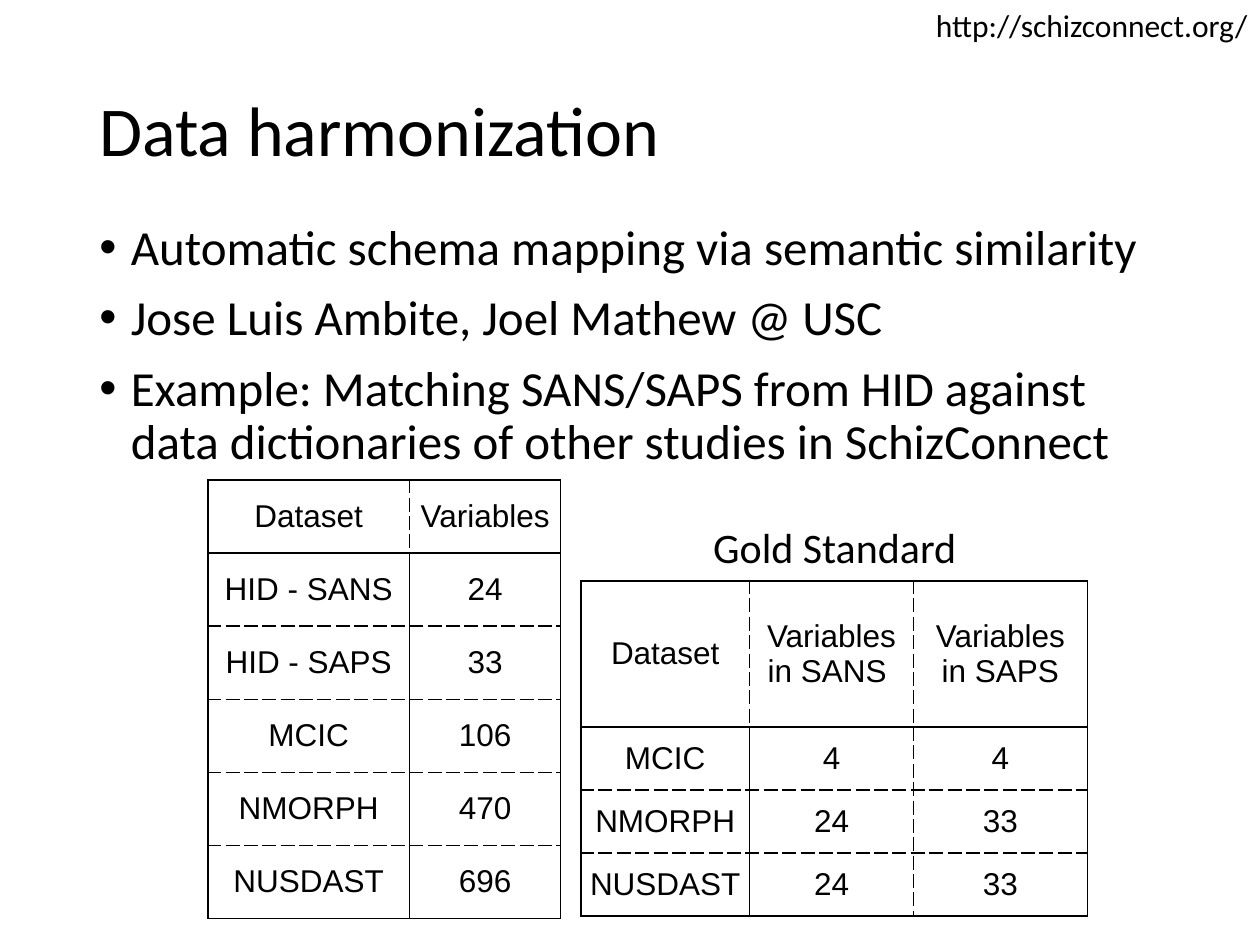
import dataclasses

import pptx
import pptx.dml.color
import pptx.enum.text
import pptx.oxml.ns
import pptx.util
from lxml import etree

Inches = pptx.util.Inches
Pt = pptx.util.Pt
ALIGN = pptx.enum.text.PP_ALIGN
ANCHOR = pptx.enum.text.MSO_ANCHOR
AUTO_SIZE = pptx.enum.text.MSO_AUTO_SIZE
qn = pptx.oxml.ns.qn


@dataclasses.dataclass(frozen=True)
class Theme:
    ink: str = "000000"
    paper: str = "FFFFFF"
    text_font: str = "Calibri"
    table_font: str = "Arial"
    title_size: int = 40
    bullet_size: int = 28
    caption_size: int = 24
    small_size: int = 18
    border_width: int = 1


THEME = Theme()


def write(paragraph, text, size, font=THEME.text_font, align=ALIGN.LEFT,
          line_spacing=None, space_before=0, bullet=None, indent=0.25):
    """Fill one paragraph with formatted text."""
    if bullet:
        properties = paragraph._p.get_or_add_pPr()
        properties.set("marL", str(Inches(indent)))
        properties.set("indent", str(-Inches(indent)))
        etree.SubElement(properties, qn("a:buFont"), typeface="Arial")
        etree.SubElement(properties, qn("a:buChar"), char=bullet)
    paragraph.alignment = align
    paragraph.space_before = Pt(space_before)
    if line_spacing:
        paragraph.line_spacing = line_spacing
    run = paragraph.add_run()
    run.text = text
    run.font.name = font
    run.font.size = Pt(size)
    run.font.color.rgb = pptx.dml.color.RGBColor.from_string(THEME.ink)


def add_box(slide, left, top, width, height, wrap=True, inset=None):
    """Add a text box and return its text frame."""
    frame = slide.shapes.add_textbox(
        Inches(left), Inches(top), Inches(width), Inches(height)).text_frame
    frame.word_wrap = wrap
    frame.auto_size = AUTO_SIZE.NONE if wrap else AUTO_SIZE.SHAPE_TO_FIT_TEXT
    if inset is not None:
        frame.margin_left = frame.margin_right = Inches(inset)
        frame.margin_top = frame.margin_bottom = Inches(inset)
    return frame


def add_title(slide, text):
    title = slide.shapes.title
    title.left, title.top = Inches(0.69), Inches(0.55)
    title.width, title.height = Inches(8.62), Inches(1.02)
    title.text_frame.auto_size = AUTO_SIZE.NONE
    title.text_frame.vertical_anchor = ANCHOR.MIDDLE
    write(title.text_frame.paragraphs[0], text, THEME.title_size,
          line_spacing=0.9)


def add_bullets(slide, points):
    frame = add_box(slide, 0.69, 1.72, 8.62, 5.04)
    for index, point in enumerate(points):
        paragraph = frame.add_paragraph() if index else frame.paragraphs[0]
        write(paragraph, point, THEME.bullet_size, line_spacing=0.9,
              space_before=10 if index else 0, bullet="•")


def set_border(cell, side, dashed):
    line = etree.SubElement(cell._tc.get_or_add_tcPr(), qn(f"a:ln{side}"),
                            w=str(Pt(THEME.border_width)))
    fill = etree.SubElement(line, qn("a:solidFill"))
    etree.SubElement(fill, qn("a:srgbClr"), val=THEME.ink)
    etree.SubElement(line, qn("a:prstDash"), val="dash" if dashed else "solid")


def add_data_table(slide, left, top, widths, heights, rows):
    """Solid frame, header rule and label rule; dashed lines elsewhere."""
    table = slide.shapes.add_table(
        len(rows), len(widths), Inches(left), Inches(top),
        Inches(sum(widths)), Inches(sum(heights))).table
    for column, width in zip(table.columns, widths):
        column.width = Inches(width)
    for row, height in zip(table.rows, heights):
        row.height = Inches(height)

    def column_dashed(edge, row):
        return 0 < edge < len(widths) and (edge > 1 or row == 0)

    def row_dashed(edge):
        return 1 < edge < len(rows)

    for r, values in enumerate(rows):
        for c, value in enumerate(values):
            cell = table.cell(r, c)
            cell.margin_left = cell.margin_right = Inches(0.06)
            cell.margin_top = cell.margin_bottom = Inches(0.06)
            cell.vertical_anchor = ANCHOR.MIDDLE
            set_border(cell, "L", column_dashed(c, r))
            set_border(cell, "R", column_dashed(c + 1, r))
            set_border(cell, "T", row_dashed(r))
            set_border(cell, "B", row_dashed(r + 1))
            cell.fill.solid()
            cell.fill.fore_color.rgb = pptx.dml.color.RGBColor.from_string(
                THEME.paper)
            write(cell.text_frame.paragraphs[0], value, THEME.small_size,
                  font=THEME.table_font, align=ALIGN.CENTER)


def main():
    presentation = pptx.Presentation()
    presentation.slide_width = Inches(10)
    presentation.slide_height = Inches(7.5)
    title_only = presentation.slide_layouts.get_by_name("Title Only")
    slide = presentation.slides.add_slide(title_only)

    # Project address in the corner
    address = add_box(slide, 7.29, 0, 2.71, 0.4, wrap=False)
    write(address.paragraphs[0], "http://schizconnect.org/",
          THEME.small_size, align=ALIGN.RIGHT)

    # Title and main points
    add_title(slide, "Data harmonization")
    add_bullets(slide, [
        "Automatic schema mapping via semantic similarity",
        "Jose Luis Ambite, Joel Mathew @ USC",
        "Example: Matching SANS/SAPS from HID against data dictionaries "
        "of other studies in SchizConnect",
    ])

    # Variables in each dataset
    add_data_table(slide, 1.65, 3.81, [1.6, 1.2], [0.58] * 6, [
        ("Dataset", "Variables"),
        ("HID - SANS", "24"),
        ("HID - SAPS", "33"),
        ("MCIC", "106"),
        ("NMORPH", "470"),
        ("NUSDAST", "696"),
    ])

    # Gold standard matches
    add_data_table(slide, 4.61, 4.61, [1.34, 1.3, 1.38], [1.16] + [0.5] * 3, [
        ("Dataset", "Variables in SANS ", "Variables in SAPS"),
        ("MCIC", "4", "4"),
        ("NMORPH", "24", "33"),
        ("NUSDAST", "24", "33"),
    ])
    caption = add_box(slide, 5.6, 4.09, 2.05, 0.5, wrap=False, inset=0.05)
    write(caption.paragraphs[0], "Gold Standard", THEME.caption_size,
          align=ALIGN.CENTER)

    presentation.save("out.pptx")


if __name__ == "__main__":
    main()
